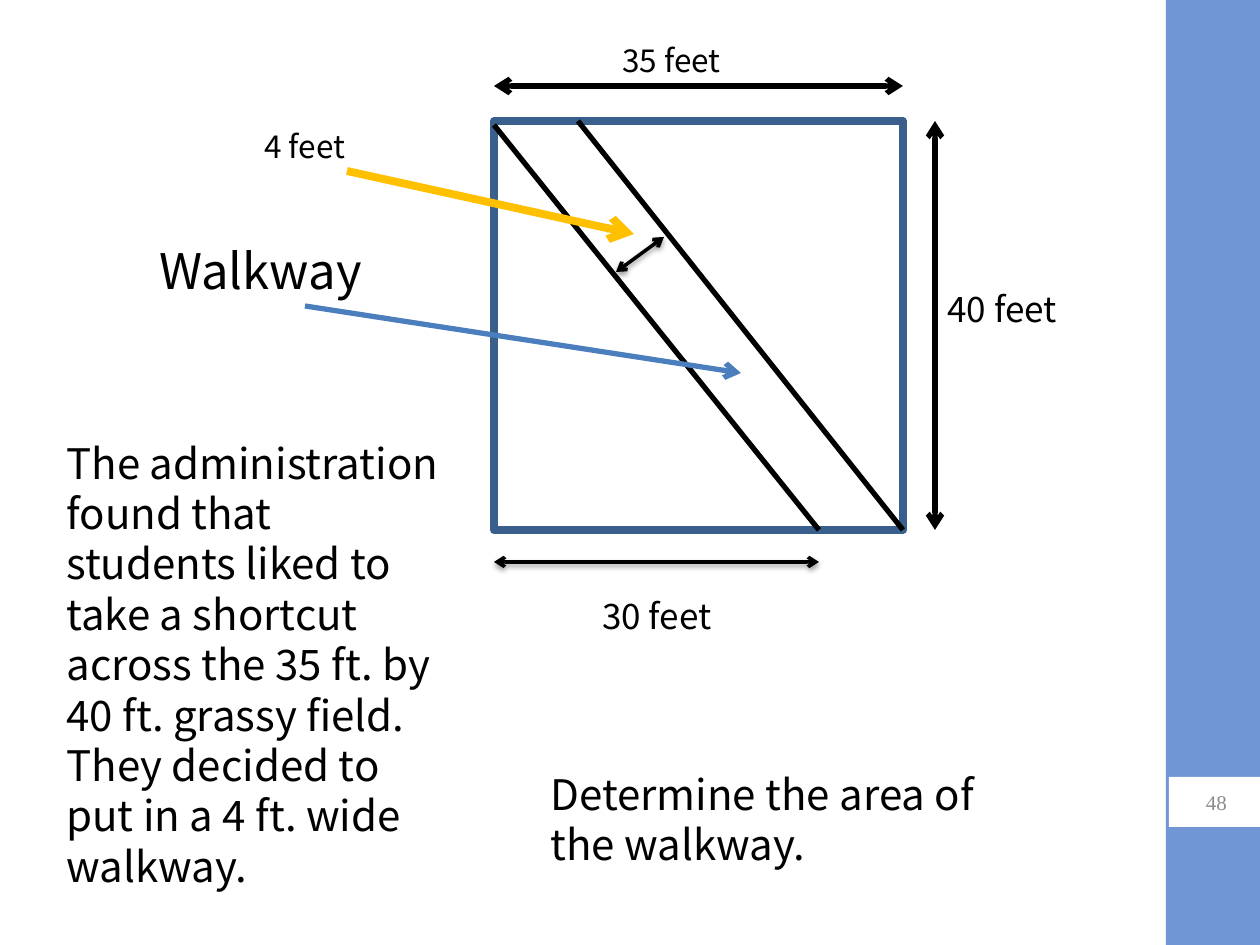
from lxml import etree
from pptx import Presentation
from pptx import util as u
from pptx.dml.color import RGBColor
from pptx.enum import shapes, text
from pptx.oxml import ns

PX = 914400 // 126


class Theme:
    font = "Noto Sans CJK TC"
    number_font = "Times New Roman"
    ink = "000000"
    white = "FFFFFF"
    band = "7097D3"
    number = "8C8C8C"
    field = "3A5F8C"
    gold = "FFC000"
    blue = "4B7EBC"
    number_size, small, label, body, large = 12, 18, 20, 24, 28
    thin, medium, thick = 2, 3, 4.5


def px(*lengths):
    return [u.Emu(length * PX) for length in lengths]


def color(value):
    return RGBColor.from_string(value)


def add_rectangle(parent, box, fill=None, line=None, width=Theme.thick):
    shape = parent.add_shape(shapes.MSO_SHAPE.RECTANGLE, *px(*box))
    shape.shadow.inherit = False
    if fill:
        shape.fill.solid()
        shape.fill.fore_color.rgb = color(fill)
    else:
        shape.fill.background()
    if line:
        shape.line.color.rgb = color(line)
        shape.line.width = u.Pt(width)
    else:
        shape.line.fill.background()
    return shape


def format_paragraph(paragraph, size, font=Theme.font, ink=Theme.ink, align=None):
    paragraph.font.size = u.Pt(size)
    paragraph.font.name = font
    paragraph.font.color.rgb = color(ink)
    paragraph.alignment = align


def add_text(parent, wording, box, size, align=None):
    shape = parent.add_textbox(*px(*box))
    frame = shape.text_frame
    frame.word_wrap = True
    frame.auto_size = text.MSO_AUTO_SIZE.SHAPE_TO_FIT_TEXT
    frame.text = wording
    format_paragraph(frame.paragraphs[0], size, align=align)


def add_line(parent, start, end, width, ink=Theme.ink, arrows=(), shadow=False):
    """Draw a line; arrows names its arrow ends, of headEnd and tailEnd."""
    line = parent.add_connector(shapes.MSO_CONNECTOR.STRAIGHT, *px(*start, *end))
    line.line.color.rgb = color(ink)
    line.line.width = u.Pt(width)
    properties = line.line._get_or_add_ln()
    for arrow in arrows:
        etree.SubElement(properties, ns.qn("a:" + arrow), type="arrow")
    effects = etree.SubElement(line._element.spPr, ns.qn("a:effectLst"))
    if shadow:
        outer = etree.SubElement(
            effects, ns.qn("a:outerShdw"), blurRad=str(u.Pt(3.1)),
            dist=str(u.Pt(1.6)), dir="5400000", rotWithShape="0")
        shade = etree.SubElement(outer, ns.qn("a:srgbClr"), val=Theme.ink)
        etree.SubElement(shade, ns.qn("a:alpha"), val="38000")


def add_dimension(parent, start, end, width=Theme.medium, shadow=False):
    add_line(parent, start, end, width, arrows=("headEnd", "tailEnd"), shadow=shadow)


def add_side_band(parent):
    add_rectangle(parent, (1166, 0, 94, 945), fill=Theme.band)
    number = add_rectangle(parent, (1169, 777, 95, 50), fill=Theme.white)
    frame = number.text_frame
    frame.vertical_anchor = text.MSO_ANCHOR.MIDDLE
    frame.text = "48"
    format_paragraph(frame.paragraphs[0], Theme.number_size, Theme.number_font,
                     Theme.number, text.PP_ALIGN.CENTER)


def add_field_diagram(parent):
    left, top, side = 494, 121, 409
    right, bottom = left + side, top + side
    walkway_top, walkway_bottom = 578, 819

    # Field and the two edges of the walkway
    add_rectangle(parent, (left, top, side, side), line=Theme.field)
    add_line(parent, (left, top + 4), (walkway_bottom, bottom), Theme.medium)
    add_line(parent, (walkway_top, top), (right, bottom), Theme.medium)

    # Labels
    add_text(parent, "4 feet", (252, 121, 220, 50), Theme.small)
    add_text(parent, "35 feet", (610, 35, 210, 50), Theme.small)
    add_text(parent, "40 feet", (935, 281, 210, 55), Theme.label)
    add_text(parent, "Walkway", (147, 234, 231, 72), Theme.large)
    add_text(parent, "30 feet", (531, 588, 252, 55), Theme.label,
             text.PP_ALIGN.CENTER)

    # Dimension arrows
    add_dimension(parent, (left, 86), (right, 86))
    add_dimension(parent, (935, top), (935, bottom))
    add_dimension(parent, (left, 562), (walkway_bottom, 562), Theme.thin, shadow=True)

    # Pointers from labels to the walkway
    add_line(parent, (347, 171), (634, 234), Theme.thick, Theme.gold, ["tailEnd"])
    add_line(parent, (305, 306), (741, 373), Theme.medium, Theme.blue, ["tailEnd"])


def main():
    presentation = Presentation()
    presentation.slide_width, presentation.slide_height = px(1260, 945)
    slide = presentation.slides.add_slide(presentation.slide_layouts[6])

    add_side_band(slide.shapes)

    # Width of the walkway, then the field
    add_dimension(slide.shapes, (616, 272), (664, 237), Theme.thin, shadow=True)
    add_field_diagram(slide.shapes.add_group_shape().shapes)

    # Problem and question
    add_text(slide.shapes,
             "The administration found that students liked to take a shortcut "
             "across the 35 ft. by 40 ft. grassy field. They decided to put in "
             "a 4 ft. wide walkway.",
             (54, 431, 398, 513), Theme.body)
    add_text(slide.shapes, "Determine the area of the walkway.",
             (538, 762, 512, 115), Theme.body)

    presentation.save("out.pptx")


if __name__ == "__main__":
    main()
